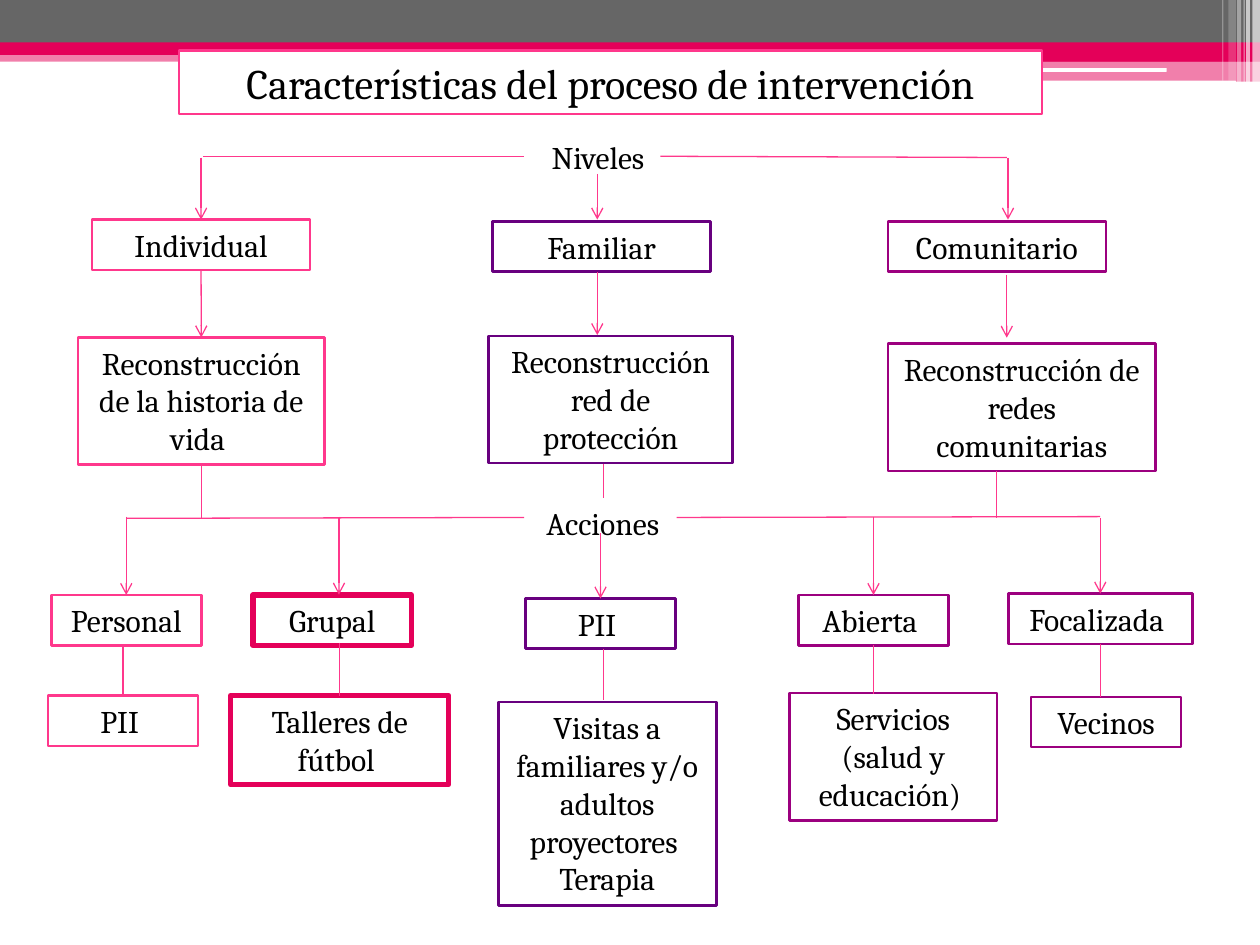
from dataclasses import dataclass

from lxml.etree import SubElement
from pptx import Presentation
from pptx.dml.color import RGBColor as Color
from pptx.enum.shapes import MSO_CONNECTOR as Connector, MSO_SHAPE as Preset
from pptx.enum.text import MSO_ANCHOR as Anchor, MSO_AUTO_SIZE as AutoSize, PP_ALIGN as Align
from pptx.oxml.ns import qn
from pptx.util import Pt

TOP, BOTTOM = 0, 2


@dataclass(frozen=True)
class Theme:
    font: str = "Cambria"
    title_size: float = 24
    body_size: float = 18
    thin: float = 0.75
    medium: float = 1.5
    thick: float = 3
    ink: str = "000000"
    white: str = "FFFFFF"
    gray: str = "666666"
    crimson: str = "E40059"
    pink: str = "FF388C"
    violet: str = "68007F"
    purple: str = "9C007F"


THEME = Theme()


def write_text(frame, text, *, size, font=THEME.font, color=THEME.ink,
               fit=AutoSize.SHAPE_TO_FIT_TEXT, anchor=Anchor.TOP):
    frame.word_wrap = True
    frame.auto_size = fit
    frame.vertical_anchor = anchor
    for index, line in enumerate(text.split("\n")):
        para = frame.add_paragraph() if index else frame.paragraphs[0]
        para.alignment = Align.CENTER
        span = para.add_run()
        span.text = line
        span.font.name = font
        span.font.size = Pt(size)
        span.font.color.rgb = Color.from_string(color)


class SlideBuilder:
    def __init__(self, page, theme):
        self.page = page
        self.theme = theme

    def outline(self, shape, color, width):
        shape.fill.solid()
        shape.fill.fore_color.rgb = Color.from_string(self.theme.white)
        shape.line.color.rgb = Color.from_string(color)
        shape.line.width = Pt(width)

    def band(self, place, color, opacity=100, rounded=False):
        preset = Preset.ROUNDED_RECTANGLE if rounded else Preset.RECTANGLE
        band = self.page.shapes.add_shape(preset, *map(Pt, place))
        band.shadow.inherit = False
        band.fill.solid()
        band.fill.fore_color.rgb = Color.from_string(color)
        band.line.fill.background()
        if opacity < 100:
            tint = band.element.spPr.find(qn("a:solidFill"))[0]
            SubElement(tint, qn("a:alpha"), val=str(opacity * 1000))

    def title(self, text, place):
        title = self.page.shapes.title
        title.left, title.top, title.width, title.height = map(Pt, place)
        title.element.getparent().append(title.element)
        self.outline(title, self.theme.pink, self.theme.medium)
        write_text(title.text_frame, text, size=self.theme.title_size,
                   fit=AutoSize.NONE, anchor=Anchor.MIDDLE)

    def box(self, text, place, color, width=THEME.medium):
        box = self.page.shapes.add_shape(Preset.RECTANGLE, *map(Pt, place))
        box.shadow.inherit = False
        self.outline(box, color, width)
        write_text(box.text_frame, text, size=self.theme.body_size)
        return box

    def label(self, text, place):
        label = self.page.shapes.add_textbox(*map(Pt, place))
        write_text(label.text_frame, text, size=self.theme.body_size)

    def line(self, start, end, arrow=False):
        joined = [not isinstance(spot[0], (int, float)) for spot in (start, end)]
        points = [(0, 0) if join else spot for join, spot in zip(joined, (start, end))]
        line = self.page.shapes.add_connector(
            Connector.STRAIGHT, *(Pt(value) for point in points for value in point))
        if joined[0]:
            line.begin_connect(*start)
        if joined[1]:
            line.end_connect(*end)
        line.line.color.rgb = Color.from_string(self.theme.pink)
        line.line.width = Pt(self.theme.thin)
        if arrow:
            SubElement(line.element.spPr.find(qn("a:ln")), qn("a:tailEnd"), type="arrow")
        SubElement(line.element.spPr, qn("a:effectLst"))


def draw_header(slide):
    theme = slide.theme
    slide.band((0, 28.8, 720, 6.5), theme.crimson, 50)
    slide.band((0, 0, 720, 24.5), theme.gray)
    slide.band((0, 24.2, 720, 7.2), theme.crimson)
    slide.band((426, 28, 294, 7.2), theme.crimson)
    slide.band((426, 34.6, 294, 12), theme.crimson, 50)
    slide.band((425.5, 38.9, 241.2, 2.2), theme.white, rounded=True)
    slide.band((580.3, 46.1, 126, 2.9), theme.white, rounded=True)
    for left, width, height, opacity in (
        (715.7, 4.3, 49, 65), (712.1, 2.2, 49, 65), (710.6, 0.7, 49, 60),
        (707, 2.2, 49, 40), (702, 4.3, 46.1, 20), (698.4, 0.7, 46.1, 30),
    ):
        slide.band((left, 0, width, height), theme.white, opacity)


def draw_boxes(slide):
    theme = slide.theme
    row, block = 28.8, 72.7
    level, action = 124.6, 85.7
    slide.label("Niveles", (279.4, 75.6, level, row))
    slide.label("Acciones", (282.2, 284.4, level, row))
    entries = {
        "individual": ("Individual", (52.6, 125.5, level, row), theme.pink),
        "family": ("Familiar", (281.5, 126.5, level, row), theme.violet),
        "community": ("Comunitario", (507.4, 126.5, level, row), theme.purple),
        "history": ("Reconstrucción de la historia de vida ", (44.7, 192.8, 140.7, block), theme.pink),
        "protection": ("Reconstrucción red de protección", (279.3, 192, 139.2, block), theme.violet),
        "networks": ("Reconstrucción de redes comunitarias", (507.4, 196.4, 153, block), theme.purple),
        "personal": ("Personal", (29.3, 340, action, row), theme.pink),
        "group": ("Grupal", (144.6, 340, 90.5, row), theme.crimson, theme.thick),
        "plan": ("PII ", (300.3, 342, action, row), theme.violet),
        "open": ("Abierta ", (456.3, 340, action, row), theme.purple),
        "focused": ("Focalizada ", (576.2, 339.2, 105.1, row), theme.purple),
        "personal_plan": ("PII ", (27.5, 397.6, action, row), theme.pink),
        "workshops": ("Talleres de fútbol ", (131.8, 397.5, level, 50.9), theme.crimson, theme.thick),
        "visits": ("Visitas a familiares y/o adultos proyectores \nTerapia", (284.7, 401.2, level, 116.3), theme.violet),
        "services": ("Servicios (salud y educación) ", (451.2, 396, 118.6, block), theme.purple),
        "neighbours": ("Vecinos", (589.2, 398.2, action, row), theme.purple),
    }
    return {name: slide.box(*entry) for name, entry in entries.items()}


def draw_lines(slide, boxes):
    for start, end in (
        ((377.3, 89.3), (575.3, 90)),
        ((115.9, 89.3), (299.5, 89.3)),
        ((72.7, 296.2), (299.5, 295.7)),
        ((386.6, 295.7), (628.6, 295.2)),
        ((boxes["history"], BOTTOM), (115.05, 295.9)),
        ((344.9, 265), (344.9, 284.4)),
        ((569.5, 269.3), (569.5, 295.9)),
        ((344.9, 370.8), (344.9, 400)),
        ((194.1, 367.2), (boxes["workshops"], TOP)),
        ((70.35, 368.6), (boxes["personal_plan"], TOP)),
        ((boxes["open"], BOTTOM), (499.15, 396.4)),
        ((boxes["focused"], BOTTOM), (628.75, 398.2)),
    ):
        slide.line(start, end)
    for start, end in (
        ((114.9, 90), (boxes["individual"], TOP)),
        ((341.3, 99.4), (341.3, 125.5)),
        ((576, 90), (576, 125.5)),
        ((boxes["individual"], BOTTOM), (boxes["history"], TOP)),
        ((341.3, 155.5), (341.3, 191.5)),
        ((575.3, 157), (575.3, 193)),
        ((72.15, 295.2), (boxes["personal"], TOP)),
        ((193.7, 295.2), (193.7, 339.8)),
        ((343.15, 304.6), (boxes["plan"], TOP)),
        ((499.15, 295.2), (boxes["open"], TOP)),
        ((628.75, 295.9), (boxes["focused"], TOP)),
    ):
        slide.line(start, end, arrow=True)


def main():
    deck = Presentation()
    deck.slide_width, deck.slide_height = Pt(720), Pt(540)
    slide = SlideBuilder(deck.slides.add_slide(deck.slide_layouts[5]), THEME)
    draw_header(slide)
    slide.title("Características del proceso de intervención", (102.2, 28.8, 493.2, 36.4))
    draw_lines(slide, draw_boxes(slide))
    deck.save("out.pptx")


if __name__ == "__main__":
    main()
